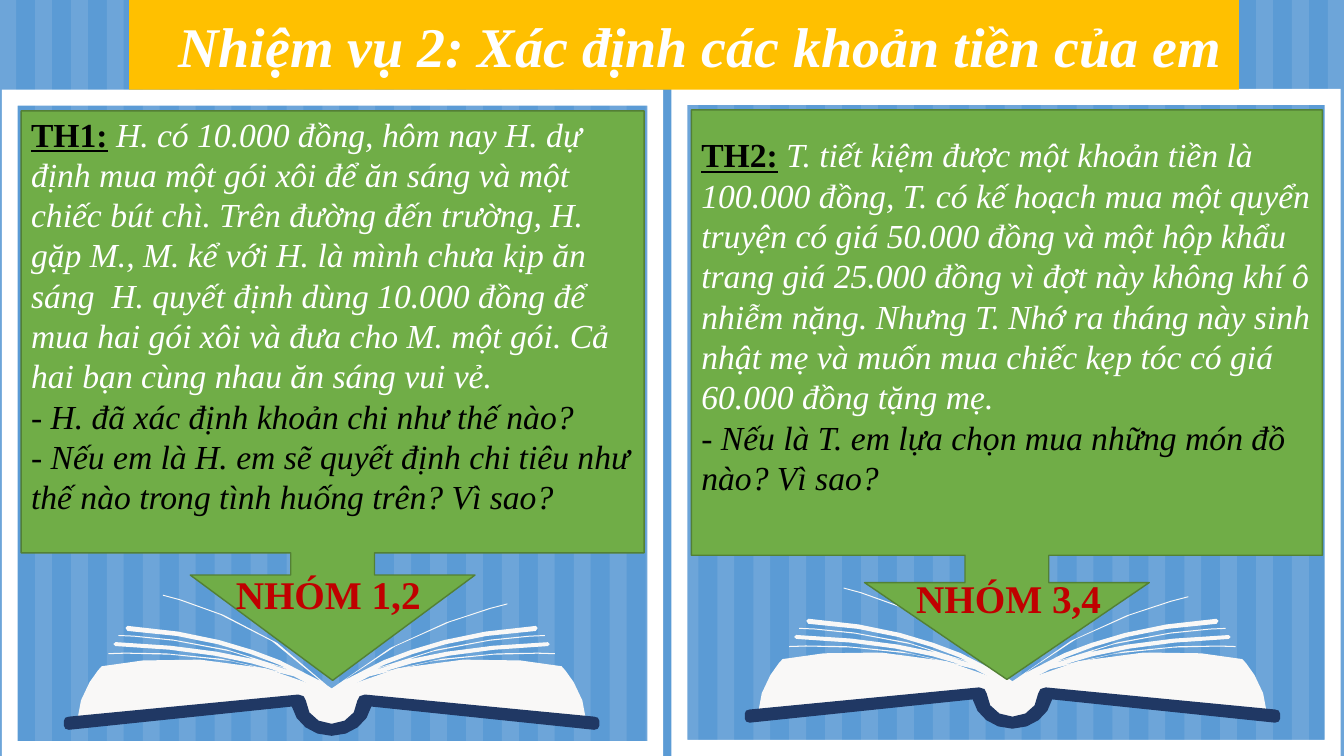
from dataclasses import dataclass
from math import dist
from lxml.etree import SubElement
from pptx import Presentation
from pptx.dml.color import RGBColor
from pptx.enum.shapes import MSO_SHAPE
from pptx.enum.text import MSO_ANCHOR, MSO_AUTO_SIZE, PP_ALIGN
from pptx.oxml.ns import qn
from pptx.util import Pt


@dataclass(frozen=True)
class Theme:
    font: str = "Times New Roman"
    sky: str = "5B9BD5"
    white: str = "FFFFFF"
    black: str = "000000"
    paper: str = "F9F8F7"
    cover: str = "203864"
    banner: str = "FFC000"
    green: str = "70AD47"
    green_edge: str = "538035"
    red: str = "C00000"
    title_size: int = 40
    label_size: int = 28
    body_size: int = 24


THEME = Theme()
WIDTH, HEIGHT = 960, 540
TITLE = "Nhiệm vụ 2: Xác định các khoản tiền của em"
BANNER_BOX = (92.2, 0, 792.7, 64.1)
TITLE_BOX = (107.3, 4.3, 784.8, 55.4)
STRIPE_COUNT, STRIPE_START, STRIPE_PITCH, STRIPE_WIDTH = 38, -0.5, 25.65, 12

GROUPS = [
    {
        "case": "TH1:",
        "story": "H. có 10.000 đồng, hôm nay H. dự định mua một gói xôi để ăn sáng và một "
                 "chiếc bút chì. Trên đường đến trường, H. gặp M., M. kể với H. là mình chưa "
                 "kịp ăn sáng  H. quyết định dùng 10.000 đồng để mua hai gói xôi và đưa cho "
                 "M. một gói. Cả hai bạn cùng nhau ăn sáng vui vẻ.",
        "questions": ["- H. đã xác định khoản chi như thế nào?",
                      "- Nếu em là H. em sẽ quyết định chi tiêu như thế nào trong tình huống "
                      "trên? Vì sao?"],
        "callout": (15.1, 79.2, 445, 406.8), "adjust": (0.147, 0.25, 0.185, 0.776),
        "label": "NHÓM 1,2", "label_box": (160.6, 403.9, 147.6, 41),
        "frame": (1.4, 64.1, 472.3, 476.6), "spine": (236.9, 424.1),
    },
    {
        "case": "TH2:",
        "story": "T. tiết kiệm được một khoản tiền là 100.000 đồng, T. có kế hoạch mua một "
                 "quyển truyện có giá 50.000 đồng và một hộp khẩu trang giá 25.000 đồng vì đợt "
                 "này không khí ô nhiễm nặng. Nhưng T. Nhớ ra tháng này sinh nhật mẹ và muốn "
                 "mua chiếc kẹp tóc có giá 60.000 đồng tặng mẹ.",
        "questions": ["- Nếu là T. em lựa chọn mua những món đồ nào? Vì sao?"],
        "callout": (493.9, 78.5, 450.7, 406.8), "adjust": (0.147, 0.25, 0.17, 0.782),
        "label": "NHÓM 3,4", "label_box": (646.6, 406.8, 147.6, 41),
        "frame": (479.5, 63.4, 478.1, 476.6), "spine": (723.2, 419),
    },
]

# Right halves of the book, measured from the spine: a pair is a line, six numbers a curve.
PAGE_HALF = [(0, 69.8), (59.8, 39.6, 135.4, 45.4, 164.2, 51.8),
             (164.2, 51.8, 181.4, 68.4, 182.2, 92.9), (23.8, 74.9),
             (23.8, 86.4, 13, 95.8, 0, 95.8)]
COVER_HALF = [(0, 101.5), (14.4, 101.5, 25.9, 92.2, 28.4, 80.6), (187.6, 97.2),
              (190.2, 96.4), (191.2, 94.3), (191.2, 90.7), (190.2, 88.6), (187.6, 87.8),
              (23.8, 72), (20, 73.2), (18.4, 76.3), (18.4, 85.7, 10.1, 92.9, 0, 92.9)]
FAN_EDGES = [(159.5, 42.5), (158.8, 42.5, 92.5, 38.2, 35.6, 56.2),
             (60.1, 47.5, 98.3, 39.6, 154.4, 37.4), (155.9, 36), (154.4, 34.6),
             (97.6, 36.7, 58.7, 44.6, 35.6, 52.6), (28.4, 55.4),
             (87.5, 31, 151.6, 30.2, 152.3, 30.2), (152.3, 29.5),
             (151.6, 29.5, 89.6, 30.2, 32, 53.3), (38.5, 50.4),
             (61.6, 41, 94, 29.5, 145.8, 26.6), (147.2, 24.5), (145.8, 23),
             (93.2, 26.6, 60.1, 38.2, 37.1, 47.5), (7.6, 62.6)]
FAN_ROOT = [(-1.1, 68.4), (-1.1, 70.6), (1.1, 72.7), (27, 59),
            (86, 38.9, 158.8, 43.2, 159.5, 43.2)]
FAN_TIPS = {1: (125.6, 7.6), -1: (120.6, 1.4)}


def color(code):
    return RGBColor.from_string(code)


def paint(shape, fill, edge=None):
    shape.shadow.inherit = False
    shape.fill.solid()
    shape.fill.fore_color.rgb = color(fill)
    if edge:
        shape.line.color.rgb = color(edge)
        shape.line.width = Pt(1)
    else:
        shape.line.fill.background()
    return shape


def add_preset(page, kind, box, fill, edge=None, adjust=()):
    shape = page.shapes.add_shape(kind, *map(Pt, box))
    for index, value in enumerate(adjust):
        shape.adjustments[index] = value
    return paint(shape, fill, edge)


def add_outline(page, points, fill):
    first, *rest = [(Pt(x), Pt(y)) for x, y in points]
    builder = page.shapes.build_freeform(*first)
    builder.add_line_segments(rest, close=True)
    return paint(builder.convert_to_shape(), fill)


def flatten(outline):
    """Turn lines and cubic curves into a list of points."""
    points = []
    for part in outline:
        if len(part) == 2:
            points.append(part)
            continue
        corners = [points[-1], part[:2], part[2:4], part[4:]]
        steps = 4 if dist(corners[0], corners[3]) > 30 else 3
        for step in range(1, steps + 1):
            t = step / steps
            weights = ((1 - t) ** 3, 3 * t * (1 - t) ** 2, 3 * t * t * (1 - t), t ** 3)
            points.append(tuple(sum(w * c[axis] for w, c in zip(weights, corners))
                                for axis in (0, 1)))
    return points


def add_book(page, spine):
    left, top = spine

    def place(points, side=1):
        return [(left + side * x, top + y) for x, y in points]

    for half, fill in ((PAGE_HALF, THEME.paper), (COVER_HALF, THEME.cover)):
        points = flatten(half)
        add_outline(page, place(points) + place(points[-2:0:-1], side=-1), fill)
    for side, (x, y) in FAN_TIPS.items():
        sweep = [(x - 72, y + 16, x, y, x, y), (x, y - 0.7),
                 (x, y - 0.7, x - 76, y + 16, 3.2, 65.5)]
        add_outline(page, place(flatten(FAN_EDGES + sweep + FAN_ROOT), side), THEME.paper)


def add_text(para, text, *, size, ink, bold=False, italic=False, underline=False):
    span = para.add_run()
    span.text = text
    font = span.font
    font.name, font.size, font.color.rgb = THEME.font, Pt(size), color(ink)
    font.bold, font.italic, font.underline = bold, italic, underline


def add_stripes(page):
    """Draw all stripes as one comb whose teeth join just along the slide's edges."""
    comb = []
    for index in range(STRIPE_COUNT):
        left = STRIPE_START + STRIPE_PITCH * index
        right = left + STRIPE_WIDTH
        comb += [(left, 0), (left, HEIGHT), (right, HEIGHT), (right, 0)]
    stripes = add_outline(page, comb, THEME.white)
    tint = stripes._element.spPr.find(qn("a:solidFill"))[0]
    SubElement(tint, qn("a:alpha"), val="11000")


def add_title(page):
    add_preset(page, MSO_SHAPE.RECTANGLE, BANNER_BOX, THEME.banner)
    title = page.shapes.title
    title.left, title.top, title.width, title.height = map(Pt, TITLE_BOX)
    frame = title.text_frame
    frame.auto_size, frame.vertical_anchor = MSO_AUTO_SIZE.NONE, MSO_ANCHOR.MIDDLE
    para = frame.paragraphs[0]
    para.alignment = PP_ALIGN.CENTER
    add_text(para, TITLE, size=THEME.title_size, ink=THEME.white, bold=True, italic=True)
    page.shapes._spTree.append(title._element)


def add_group(page, group):
    callout = add_preset(page, MSO_SHAPE.DOWN_ARROW_CALLOUT, group["callout"], THEME.green,
                         THEME.green_edge, group["adjust"])
    frame = callout.text_frame
    frame.word_wrap, frame.vertical_anchor = True, MSO_ANCHOR.MIDDLE
    frame.margin_bottom = Pt(27.6)
    para = frame.paragraphs[0]
    para.alignment = PP_ALIGN.LEFT
    size = THEME.body_size
    add_text(para, group["case"], size=size, ink=THEME.black, bold=True, underline=True)
    add_text(para, " ", size=size, ink=THEME.white)
    add_text(para, group["story"], size=size, ink=THEME.white, italic=True)
    for question in group["questions"]:
        para = frame.add_paragraph()
        para.alignment = PP_ALIGN.LEFT
        add_text(para, question, size=size, ink=THEME.black, italic=True)

    label = page.shapes.add_textbox(*map(Pt, group["label_box"])).text_frame
    label.word_wrap = False
    label.paragraphs[0].alignment = PP_ALIGN.CENTER
    add_text(label.paragraphs[0], group["label"], size=THEME.label_size, ink=THEME.red, bold=True)


def main():
    deck = Presentation()
    deck.slide_width, deck.slide_height = Pt(WIDTH), Pt(HEIGHT)
    page = deck.slides.add_slide(deck.slide_layouts[5])
    page.background.fill.solid()
    page.background.fill.fore_color.rgb = color(THEME.sky)
    add_stripes(page)
    for group in GROUPS:
        add_preset(page, MSO_SHAPE.FRAME, group["frame"], THEME.white, adjust=(0.024,))
        add_book(page, group["spine"])
    add_title(page)
    for group in GROUPS:
        add_group(page, group)
    deck.save("out.pptx")


if __name__ == "__main__":
    main()
